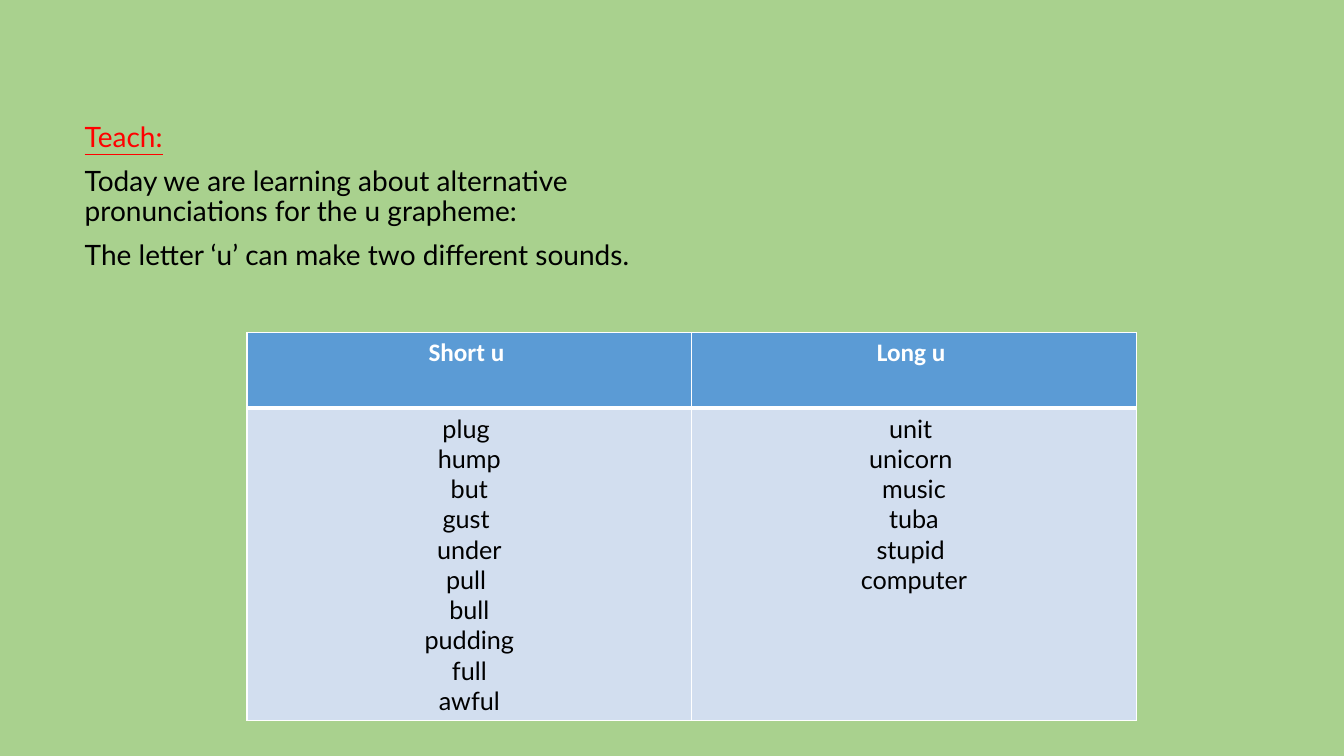
from lxml import etree
from pptx import Presentation
from pptx.dml.color import RGBColor
from pptx.enum import text
from pptx.oxml import ns
from pptx.util import Inches, Pt

WHITE, BLACK, RED = "FFFFFF", "000000", "FF0000"
SOUNDS = {
    "Short u ": ["plug ", "hump", "but", "gust ", "under", "pull ", "bull",
                 "pudding", "full", "awful"],
    "Long u ": ["unit ", "unicorn ", "music", "tuba", "stupid ", "computer"],
}


def colour(value):
    return RGBColor.from_string(value)


def paint(fill, value):
    fill.solid()
    fill.fore_color.rgb = colour(value)


def write(paragraph, words, size=18, font="Lato", ink=BLACK, bold=False,
          underline=False, align=text.PP_ALIGN.LEFT):
    paragraph.alignment = align
    run = paragraph.add_run()
    run.text = words
    run.font.size = Pt(size)
    run.font.name = font
    run.font.color.rgb = colour(ink)
    run.font.bold = bold
    run.font.underline = underline


def next_paragraph(frame, index):
    return frame.add_paragraph() if index else frame.paragraphs[0]


def add_border(cell, side, width):
    properties = cell._tc.get_or_add_tcPr()
    line = etree.SubElement(properties, ns.qn(f"a:ln{side}"), w=str(Pt(width)))
    fill = etree.SubElement(line, ns.qn("a:solidFill"))
    etree.SubElement(fill, ns.qn("a:srgbClr"), val=WHITE)


def fill_cell(cell, lines, background, top=1, bottom=1, **style):
    for side, width in (("L", 1), ("R", 1), ("T", top), ("B", bottom)):
        add_border(cell, side, width)
    paint(cell.fill, background)
    for index, words in enumerate(lines):
        write(next_paragraph(cell.text_frame, index), words,
              align=text.PP_ALIGN.CENTER, **style)


def add_lesson(slide):
    lesson = slide.placeholders[1]
    lesson.left, lesson.top = Inches(0.74), Inches(1.17)
    lesson.width, lesson.height = Inches(11.9), Inches(5.85)
    frame = lesson.text_frame
    frame.word_wrap = True
    frame.auto_size = text.MSO_AUTO_SIZE.NONE
    frame._txBody.bodyPr.set("numCol", "2")
    sentences = [
        ("Teach:", {"ink": RED, "underline": True}),
        ("Today we are learning about alternative pronunciations "
         "for the u grapheme:", {}),
        ("The letter ‘u’ can make two different sounds.", {}),
    ]
    for index, (words, style) in enumerate(sentences):
        paragraph = next_paragraph(frame, index)
        paragraph.line_spacing = 0.9
        paragraph.space_before = Pt(10)
        properties = paragraph._p.get_or_add_pPr()
        properties.set("marL", "0")
        properties.set("indent", "0")
        etree.SubElement(properties, ns.qn("a:buNone"))
        write(paragraph, words, size=20, **style)


def add_sound_table(slide):
    table = slide.shapes.add_table(2, len(SOUNDS), Inches(2.45), Inches(3.3),
                                   Inches(8.82), Inches(3.85)).table
    table.rows[0].height, table.rows[1].height = Inches(0.75), Inches(3.1)
    for column, (sound, examples) in enumerate(SOUNDS.items()):
        fill_cell(table.cell(0, column), [sound], "5B9BD5", bottom=3,
                  font="Calibri", ink=WHITE, bold=True)
        fill_cell(table.cell(1, column), examples, "D2DEEF", top=3)


def main():
    deck = Presentation()
    deck.slide_width, deck.slide_height = Inches(13.33), Inches(7.5)
    slide = deck.slides.add_slide(deck.slide_layouts[1])
    paint(slide.background.fill, "A9D18E")
    empty_title = slide.shapes.title.element
    empty_title.getparent().remove(empty_title)
    add_lesson(slide)
    add_sound_table(slide)
    deck.save("out.pptx")


if __name__ == "__main__":
    main()
